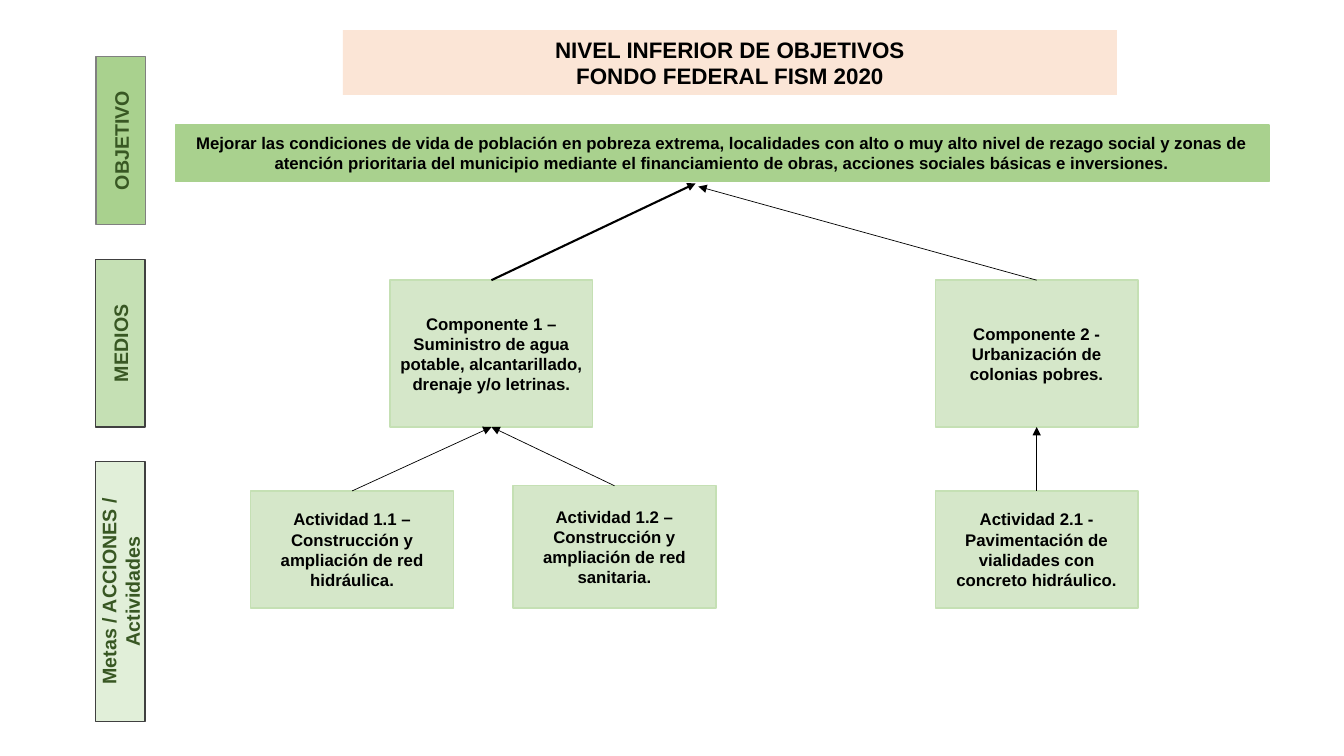
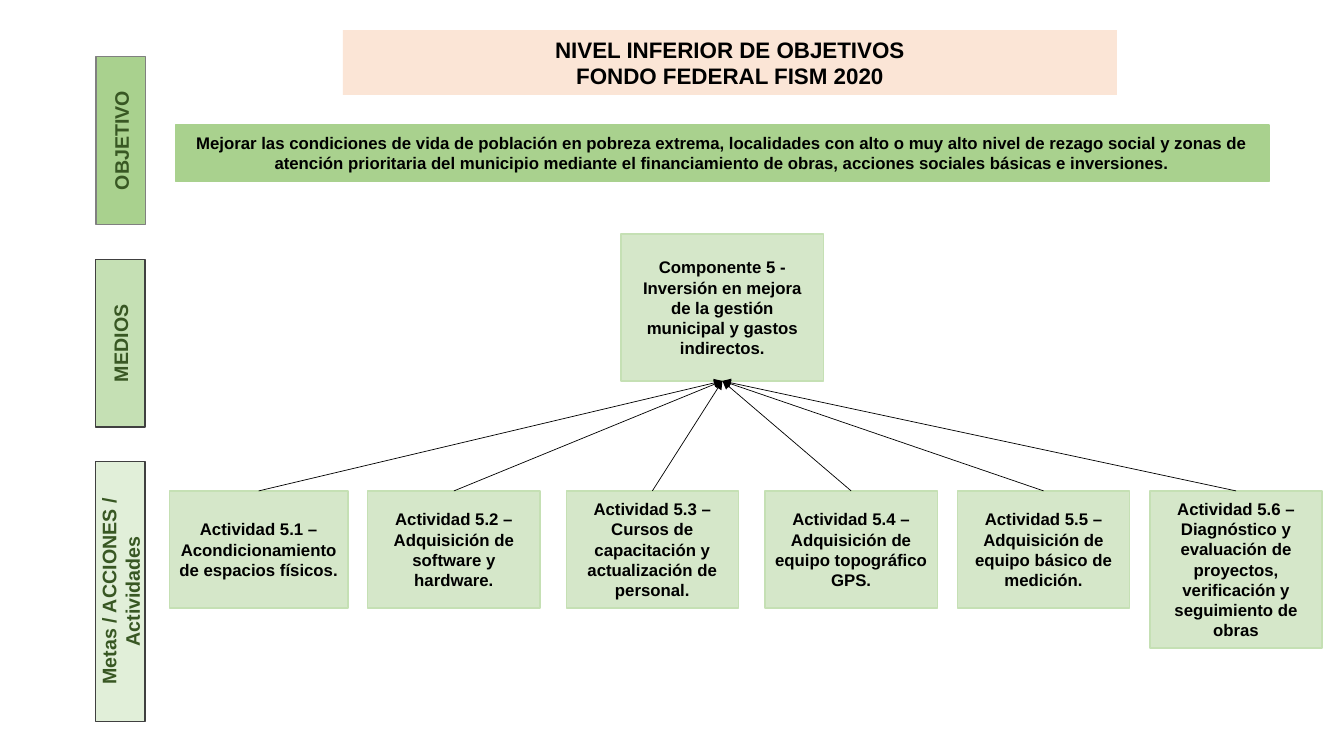
from lxml import etree
from pptx import Presentation
from pptx.dml.color import RGBColor
from pptx.enum import shapes, text
from pptx.oxml import ns
from pptx.util import Cm, Pt

FONT = "Arial"
BLACK = RGBColor(0x00, 0x00, 0x00)
PEACH = RGBColor(0xFB, 0xE5, 0xD6)
GREEN = RGBColor(0x70, 0xAD, 0x47)
MID_GREEN = RGBColor(0xA9, 0xD1, 0x8E)
PALE_GREEN = RGBColor(0xC5, 0xE0, 0xB4)
DARK_GREEN = RGBColor(0x38, 0x57, 0x23)
GREY = RGBColor(0x80, 0x80, 0x80)
DARK_GREY = RGBColor(0x40, 0x40, 0x40)

TITLE = "NIVEL INFERIOR DE OBJETIVOS\nFONDO FEDERAL FISM 2020"
OBJECTIVE = (
    "Mejorar las condiciones de vida de población en pobreza extrema, "
    "localidades con alto o muy alto nivel de rezago social y zonas de "
    "atención prioritaria del municipio mediante el financiamiento de obras, "
    "acciones sociales básicas e inversiones."
)

# Level labels: text, centre x, centre y, length, fill, line, opacity %
LEVELS = [
    ("OBJETIVO", 3.05, 3.54, 4.22, MID_GREEN, GREY, 100),
    ("MEDIOS", 3.03, 8.65, 4.22, PALE_GREEN, DARK_GREY, 100),
    ("Metas / ACCIONES / Actividades", 3.03, 14.9, 6.55,
     PALE_GREEN, DARK_GREY, 50),
]
LEVEL_THICKNESS = 1.25

BOX_W = 5.11
COMPONENT_H = 3.7
ACTIVITY_TOP, ACTIVITY_H = 12.37, 2.95


def format_text(tf, content, size, color):
    tf.text = content
    tf.word_wrap = True
    tf.auto_size = text.MSO_AUTO_SIZE.NONE
    tf.vertical_anchor = text.MSO_ANCHOR.MIDDLE
    for p in tf.paragraphs:
        p.alignment = text.PP_ALIGN.CENTER
        p.font.name = FONT
        p.font.size = Pt(size)
        p.font.bold = True
        p.font.color.rgb = color


def set_fill(sp, color, opacity=100):
    sp.fill.solid()
    sp.fill.fore_color.rgb = color
    if opacity < 100:
        clr = sp.fill._xPr.find(".//" + ns.qn("a:srgbClr"))
        etree.SubElement(clr, ns.qn("a:alpha"), val=str(opacity * 1000))


def add_box(s, content, left, top, width, height, fill=GREEN, line=PALE_GREEN,
            opacity=29, size=12, color=BLACK):
    sp = s.shapes.add_shape(shapes.MSO_SHAPE.FLOWCHART_PROCESS,
                            Cm(left), Cm(top), Cm(width), Cm(height))
    sp.shadow.inherit = False
    set_fill(sp, fill, opacity)
    sp.line.color.rgb = line
    sp.line.width = Pt(1)
    format_text(sp.text_frame, content, size, color)
    return sp


def add_arrow(s, source, target=None, end=(0, 0), width=0.5):
    """Arrow from the top of source to the bottom of target, or to end in cm."""
    cx = s.shapes.add_connector(shapes.MSO_CONNECTOR.STRAIGHT,
                                0, 0, Cm(end[0]), Cm(end[1]))
    cx.begin_connect(source, 0)
    if target is not None:
        cx.end_connect(target, 2)
    cx.line.color.rgb = BLACK
    cx.line.width = Pt(width)
    etree.SubElement(cx.line._get_or_add_ln(), ns.qn("a:tailEnd"),
                     type="triangle")
    etree.SubElement(cx._element.spPr, ns.qn("a:effectLst"))


def add_level(s, label, cx, cy, length, fill, line, opacity):
    sp = add_box(s, label, cx - length / 2, cy - LEVEL_THICKNESS / 2,
                 length, LEVEL_THICKNESS, fill, line, opacity, 14, DARK_GREEN)
    sp.rotation = 270


def add_base_slide(prs):
    """Slide with the title, the level labels and the objective band."""
    s = prs.slides.add_slide(prs.slide_layouts[5])
    title = s.shapes.title
    title.left, title.top = Cm(8.64), Cm(0.76)
    title.width, title.height = Cm(19.51), Cm(1.63)
    set_fill(title, PEACH)
    format_text(title.text_frame, TITLE, 16, BLACK)
    for level in LEVELS:
        add_level(s, *level)
    add_box(s, OBJECTIVE, 4.42, 3.15, 27.56, 1.42, MID_GREEN, MID_GREEN, 100)
    return s


def add_component(s, content, left, top, activities):
    """Component box with its activities: (text, left, top, width, height)."""
    component = add_box(s, content, left, top, BOX_W, COMPONENT_H)
    for activity in activities:
        add_arrow(s, add_box(s, *activity), component)
    return component


def build_components_1_2(prs):
    s = add_base_slide(prs)
    water = add_component(
        s, "Componente 1 –Suministro de agua potable, alcantarillado, "
           "drenaje y/o letrinas.", 9.83, 7.06,
        [("Actividad 1.1 – Construcción y ampliación de red hidráulica.",
          6.32, ACTIVITY_TOP, BOX_W, ACTIVITY_H),
         ("Actividad 1.2 – Construcción y ampliación de red sanitaria.",
          12.93, 12.24, BOX_W, 3.08)])
    paving = add_component(
        s, "Componente 2 - Urbanización de colonias pobres.", 23.57, 7.06,
        [("Actividad 2.1 - Pavimentación de vialidades con concreto "
          "hidráulico.", 23.57, ACTIVITY_TOP, BOX_W, ACTIVITY_H)])
    # Arrows to the objective
    add_arrow(s, water, end=(17.53, 4.62), width=1.5)
    add_arrow(s, paving, end=(17.6, 4.7))


def build_component_5(prs):
    s = add_base_slide(prs)
    # Text, left, width, height
    activities = [
        ("Acondicionamiento de espacios físicos.", 4.27, 4.5, ACTIVITY_H),
        ("Adquisición de software y hardware.", 9.27, 4.34, ACTIVITY_H),
        ("Cursos de capacitación y actualización de personal.",
         14.27, 4.34, ACTIVITY_H),
        ("Adquisición de equipo topográfico GPS.", 19.28, 4.34, ACTIVITY_H),
        ("Adquisición de equipo básico de medición.",
         24.13, 4.34, ACTIVITY_H),
        ("Diagnóstico y evaluación de proyectos, verificación y seguimiento "
         "de obras", 28.98, 4.34, 3.96),
    ]
    add_component(
        s, "Componente 5 - Inversión en mejora de la gestión municipal y "
           "gastos indirectos.", 15.65, 5.9,
        [(f"Actividad 5.{n} – {content}", left, ACTIVITY_TOP, width, height)
         for n, (content, left, width, height) in enumerate(activities, 1)])


def main():
    prs = Presentation()
    prs.slide_width, prs.slide_height = Cm(33.87), Cm(19.05)
    build_components_1_2(prs)
    build_component_5(prs)
    prs.save("out.pptx")


if __name__ == "__main__":
    main()
